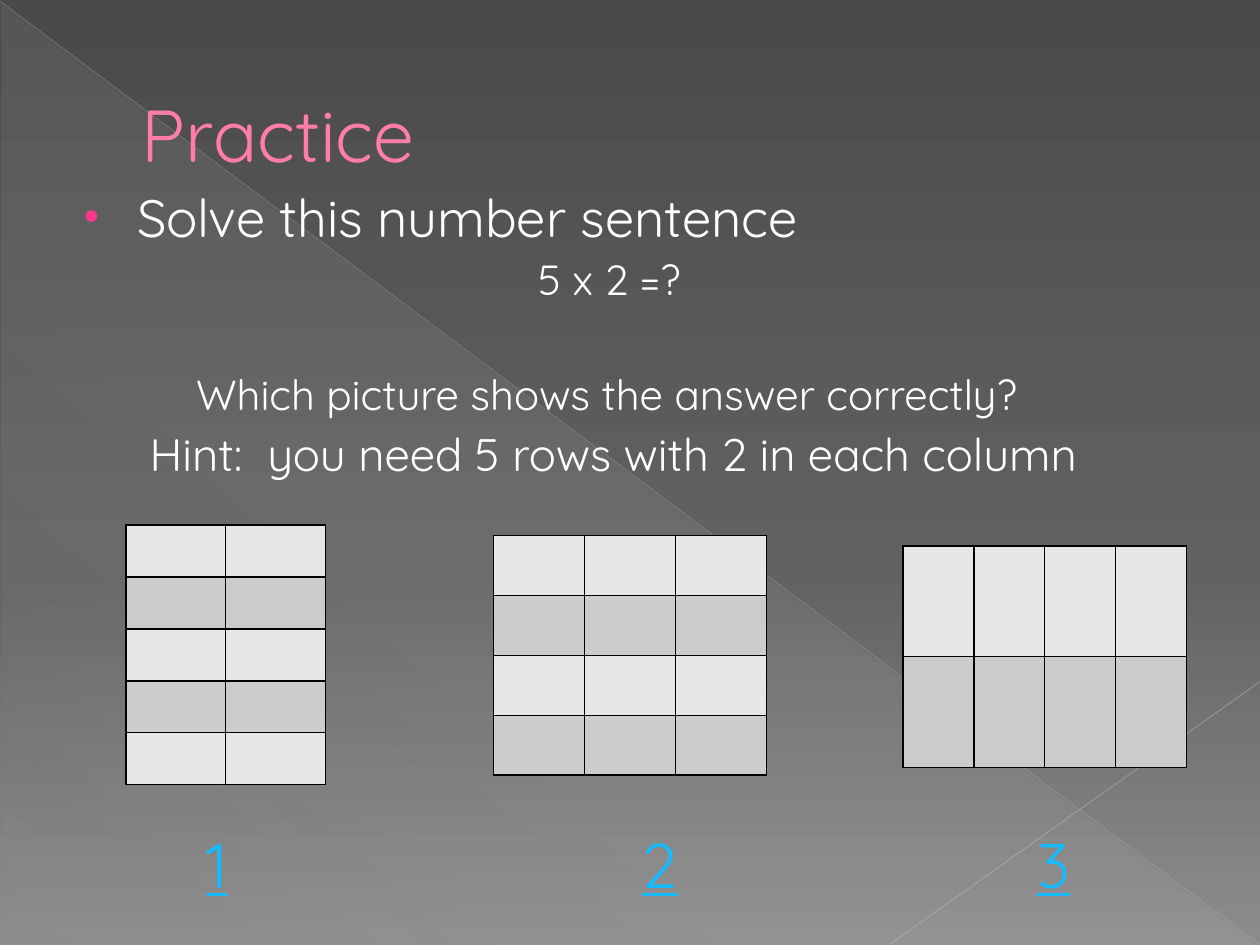
from lxml import etree
from pptx import Presentation
from pptx.dml.color import RGBColor
from pptx.enum import shapes, text
from pptx.oxml import ns
from pptx.util import Pt

FONT = "Quicksand"
PINK = RGBColor(0xFF, 0x7D, 0xA7)
BULLET_PINK = RGBColor(0xFF, 0x38, 0x8C)
WHITE = RGBColor(0xFF, 0xFF, 0xFF)
BLACK = RGBColor(0, 0, 0)
LINK_BLUE = RGBColor(0x17, 0xBB, 0xFD)
LIGHT_ROW = RGBColor(0xE7, 0xE7, 0xE7)
DARK_ROW = RGBColor(0xCC, 0xCC, 0xCC)
SHEEN = RGBColor(0xD2, 0xD2, 0xD2)
DIAGONAL = RGBColor(0xBF, 0xBF, 0xBF)
CORNER_LINE = RGBColor(0xC6, 0xC6, 0xC6)
BACKDROP = [(0, RGBColor(0x4A, 0x4A, 0x4A), 100),
            (60, RGBColor(0x62, 0x62, 0x62), 100),
            (100, RGBColor(0x8C, 0x8C, 0x8C), 100)]


def sub(parent, tag, **attributes):
    return etree.SubElement(parent, ns.qn(tag), attributes)


def add_color(parent, color, opacity=100):
    clr = sub(parent, "a:srgbClr", val=str(color))
    if opacity < 100:
        sub(clr, "a:alpha", val=str(opacity * 1000))


def set_gradient(fill, root, stops, angle):
    """Fill with (position, colour, opacity) stops, all in percent."""
    fill.gradient()
    gradient = root.find(".//" + ns.qn("a:gradFill"))
    stop_list = gradient.find(ns.qn("a:gsLst"))
    for old_stop in list(stop_list):
        stop_list.remove(old_stop)
    for position, color, opacity in stops:
        add_color(sub(stop_list, "a:gs", pos=str(position * 1000)), color, opacity)
    gradient.find(ns.qn("a:lin")).set("ang", str(angle * 60000))


def add_backdrop(slide, width, height):
    background = slide.background
    set_gradient(background.fill, slide._element, BACKDROP, 90)

    # Sheen over the lower left half
    sheen = slide.shapes.add_shape(shapes.MSO_SHAPE.RIGHT_TRIANGLE,
                                   Pt(0.7), Pt(1.4), Pt(width - 1.4), Pt(height - 1.4))
    sheen.shadow.inherit = False
    sheen.line.fill.background()
    set_gradient(sheen.fill, sheen._element,
                 [(0, SHEEN, 10), (70, SHEEN, 8), (100, SHEEN, 1)], 133)

    # Crossing hairlines
    for x1, y1, x2, y2, color, weight, opacity in (
            (0, 0.7, width - 0.7, height - 0.7, DIAGONAL, 0.39, 35),
            (width, 389.5, 509, height - 0.7, CORNER_LINE, 0.47, 45)):
        hairline = slide.shapes.add_connector(shapes.MSO_CONNECTOR.STRAIGHT,
                                              Pt(x1), Pt(y1), Pt(x2), Pt(y2))
        hairline.line.color.rgb = color
        hairline.line.width = Pt(weight)
        properties = hairline._element.spPr
        sub(properties.find(".//" + ns.qn("a:srgbClr")), "a:alpha", val=str(opacity * 1000))
        sub(properties, "a:effectLst")


def add_text_frame(slide, left, top, width, height, anchor=text.MSO_ANCHOR.TOP):
    frame = slide.shapes.add_textbox(Pt(left), Pt(top), Pt(width), Pt(height)).text_frame
    frame.word_wrap = True
    frame.vertical_anchor = anchor
    return frame


def write(paragraph, words, size, color, indent=0, hanging=0, **formats):
    run = paragraph.add_run()
    run.text = words
    for name, value in {"name": FONT, "size": Pt(size), **formats}.items():
        setattr(run.font, name, value)
    run.font.color.rgb = color
    properties = paragraph._p.get_or_add_pPr()
    properties.set("marL", str(Pt(indent)))
    properties.set("indent", str(Pt(-hanging)))
    return properties


def add_title(slide, left, top, width, height):
    frame = add_text_frame(slide, left, top, width, height, text.MSO_ANCHOR.MIDDLE)
    write(frame.paragraphs[0], "Practice", 42, PINK, indent=38)


def add_question(slide, left, top, width, height):
    frame = add_text_frame(slide, left, top, width, height)

    # Bulleted task
    properties = write(frame.paragraphs[0], "Solve this number sentence", 30, WHITE,
                       indent=35.3, hanging=30.3)
    add_color(sub(properties, "a:buClr"), BULLET_PINK)
    sub(properties, "a:buSzPct", val="80000")
    sub(properties, "a:buFont", typeface="Arial")
    sub(properties, "a:buChar", char="•")

    # Number sentence, question and hint
    for words, size, indent, space_before in (
            ("5 x 2 =?", 24, 264.5, 3.4),
            ("Which picture shows the answer correctly?", 24, 69, 36.8),
            ("Hint:  you need 5 rows with 2 in each column", 26, 42.5, 4)):
        paragraph = frame.add_paragraph()
        paragraph.space_before = Pt(space_before)
        write(paragraph, words, size, WHITE, indent)


def add_array(slide, left, top, width, height, rows, columns):
    """Grid of empty cells with alternating row shades."""
    array = slide.shapes.add_table(rows, columns, Pt(left), Pt(top),
                                   Pt(width), Pt(height)).table
    for column in array.columns:
        column.width = Pt(width / columns)
    for index, row in enumerate(array.rows):
        row.height = Pt(height / rows)
        for cell in row.cells:
            properties = cell._tc.get_or_add_tcPr()
            for side in ("a:lnL", "a:lnR", "a:lnT", "a:lnB"):
                border = sub(properties, side, w=str(Pt(1)))
                add_color(sub(border, "a:solidFill"), BLACK)
            cell.fill.solid()
            cell.fill.fore_color.rgb = DARK_ROW if index % 2 else LIGHT_ROW


def add_choice(slide, center, top, label):
    width = 60
    frame = add_text_frame(slide, center - width / 2, top, width, 51)
    frame.paragraphs[0].alignment = text.PP_ALIGN.CENTER
    write(frame.paragraphs[0], label, 36, LINK_BLUE, underline=True)


def main():
    deck = Presentation()
    width, height = 720, 540
    deck.slide_width, deck.slide_height = Pt(width), Pt(height)
    slide = deck.slides.add_slide(deck.slide_layouts[6])

    add_backdrop(slide, width, height)
    add_title(slide, 36, 21, 648, 110)
    add_question(slide, 36, 102, 648, 186)

    # Array box, its rows and columns, and the centre of its number
    choices = [((72, 300, 114, 148.5), 5, 2, 124),
               ((282, 306, 156, 137), 4, 3, 377),
               ((516, 312, 162, 126.5), 2, 4, 602)]
    for number, (box, rows, columns, center) in enumerate(choices, 1):
        add_array(slide, *box, rows, columns)
        add_choice(slide, center, 468, str(number))

    deck.save("out.pptx")


if __name__ == "__main__":
    main()
